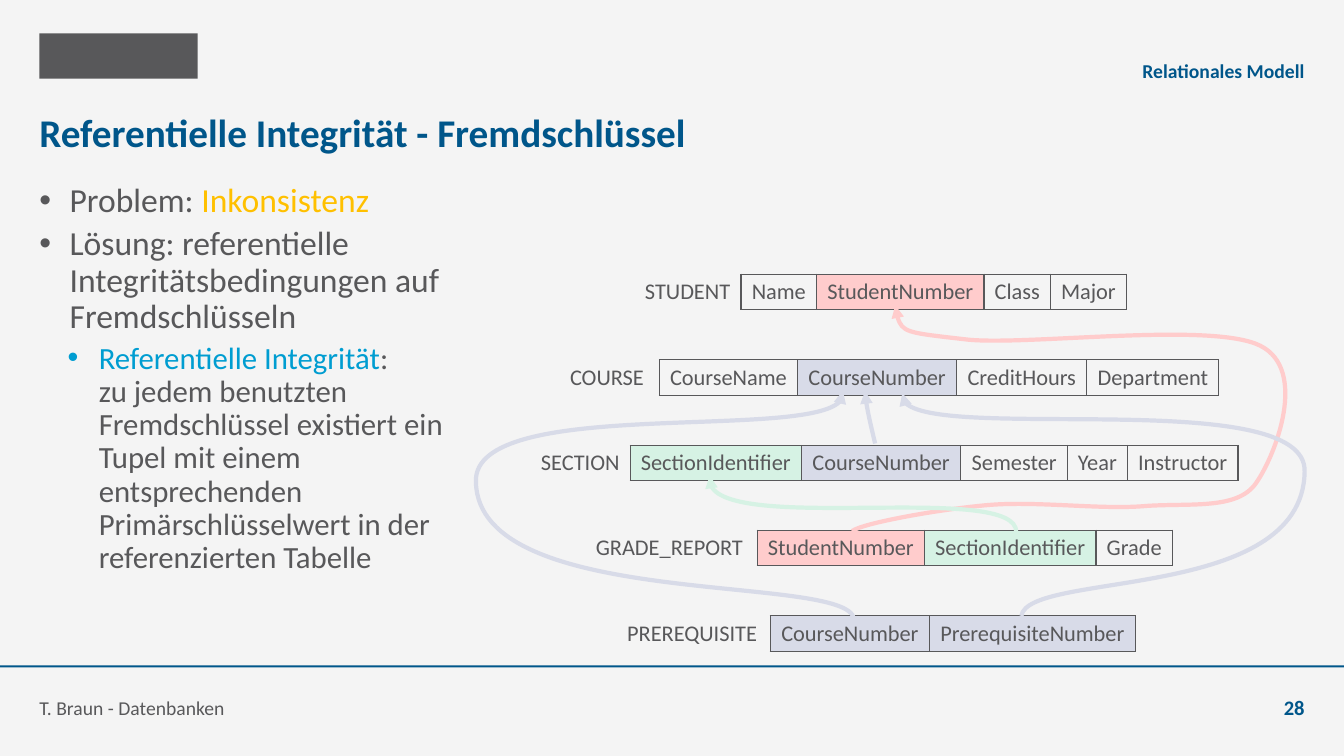
"""Build the slide on referential integrity and foreign keys."""
from lxml import etree
from pptx import Presentation
from pptx.dml.color import RGBColor
from pptx.enum.shapes import MSO_SHAPE
from pptx.enum.text import MSO_ANCHOR, PP_ALIGN
from pptx.oxml.ns import qn
from pptx.util import Pt

PX = 9144
TOP, MID, LOW = MSO_ANCHOR.TOP, MSO_ANCHOR.MIDDLE, MSO_ANCHOR.BOTTOM
LEFT, RIGHT, CENTER = PP_ALIGN.LEFT, PP_ALIGN.RIGHT, PP_ALIGN.CENTER
RECT = MSO_SHAPE.RECTANGLE
NAVY, GRAY, GOLD, CYAN = "00568A", "58585A", "FFC000", "009DD1"
PINK, LILAC, MINT = "FFCCCC", "D8DBE8", "D6F2E4"
hue = RGBColor.from_string


def box(x, y, w, h, anchor):
    """Add a text box without margins and return its frame."""
    frame = slide.shapes.add_textbox(x * PX, y * PX, w * PX, h * PX).text_frame
    frame.word_wrap = True
    frame.vertical_anchor = anchor
    frame.margin_left = frame.margin_right = 0
    frame.margin_top = frame.margin_bottom = 0
    return frame


def style(par, size, color, bold=False):
    """Set the font of a paragraph."""
    par.font.name = "Calibri"
    par.font.size = Pt(size)
    par.font.bold = bold
    par.font.color.rgb = hue(color)


deck = Presentation()
deck.slide_width, deck.slide_height = 1333 * PX, 750 * PX
slide = deck.slides.add_slide(deck.slide_layouts[6])
slide.background.fill.solid()
slide.background.fill.fore_color.rgb = hue("F4F4F4")

for x, y, w, h, color in [(39, 33, 157, 45, GRAY), (0, 660, 1333, 2, NAVY)]:
    bar = slide.shapes.add_shape(RECT, x * PX, y * PX, w * PX, h * PX)
    bar.shadow.inherit = False
    bar.fill.solid()
    bar.fill.fore_color.rgb = hue(color)
    bar.line.fill.background()

labels = [
    (39, 99, 1255, 63, MID, LEFT, "Referentielle Integrität - Fremdschlüssel", 28, NAVY, True),
    (393, 43, 901, 39, LOW, RIGHT, "Relationales Modell", 14, NAVY, True),
    (39, 675, 920, 39, LOW, LEFT, "T. Braun - Datenbanken", 14, GRAY, False),
    (1215, 675, 79, 39, LOW, RIGHT, "28", 14.7, NAVY, True),
]
for x, y, w, h, anchor, align, text, size, color, bold in labels:
    par = box(x, y, w, h, anchor).paragraphs[0]
    par.text = text
    par.alignment = align
    style(par, size, color, bold)

points = [
    (0, 30, 30, 24, [("Problem: ", GRAY), ("Inkonsistenz", GOLD)]),
    (0, 30, 30, 24, [("Lösung: referentielle Integritätsbedingungen auf Fremdschlüsseln", GRAY)]),
    (1, 59, 31, 22, [
        ("Referentielle Integrität", CYAN),
        (":\vzu jedem benutzten Fremdschlüssel existiert ein Tupel mit einem "
         "entsprechenden Primärschlüsselwert in der referenzierten Tabelle", GRAY),
    ]),
]
body = box(39, 182, 421, 464, TOP)
for i, (level, left, hang, size, runs) in enumerate(points):
    par = body.add_paragraph() if i else body.paragraphs[0]
    par.level = level
    par.line_spacing = 0.9
    if i:
        par.space_before = Pt(5)
    props = par._p.get_or_add_pPr()
    props.set("marL", str(left * PX))
    props.set("indent", str(-hang * PX))
    etree.SubElement(props, qn("a:buFont")).set("typeface", "Arial")
    etree.SubElement(props, qn("a:buChar")).set("char", "•")
    style(par, size, GRAY)
    for text, color in runs:
        for j, part in enumerate(text.split("\v")):
            if j:
                par.add_line_break()
            run = par.add_run()
            run.text = part
            run.font.color.rgb = hue(color)

wide = {
    "STUDENT": 106, "Name": 75, "StudentNumber": 166, "Class": 66, "Major": 75,
    "COURSE": 104, "CourseName": 137, "CourseNumber": 158, "CreditHours": 129,
    "Department": 131, "SECTION": 99, "SectionIdentifier": 170, "Semester": 106,
    "Year": 59, "Instructor": 110, "GRADE_REPORT": 168, "Grade": 76,
    "PREREQUISITE": 150, "PrerequisiteNumber": 204,
}
keys = {"StudentNumber": PINK, "CourseNumber": LILAC,
        "PrerequisiteNumber": LILAC, "SectionIdentifier": MINT}
schema = [
    (629, CENTER, ["STUDENT", "Name", "StudentNumber", "Class", "Major"]),
    (550, CENTER, ["COURSE", "CourseName", "CourseNumber", "CreditHours", "Department"]),
    (526, CENTER, ["SECTION", "SectionIdentifier", "CourseNumber", "Semester", "Year",
                   "Instructor"]),
    (583, LEFT, ["GRADE_REPORT", "StudentNumber", "SectionIdentifier", "Grade"]),
    (614, LEFT, ["PREREQUISITE", "CourseNumber", "PrerequisiteNumber"]),
]
for i, (x, align, names) in enumerate(schema):
    y = round(272 + 84.75 * i)
    total = sum(wide[name] for name in names)
    table = slide.shapes.add_table(1, len(names), x * PX, y * PX, total * PX, 35 * PX).table
    table.first_row = table.horz_banding = False
    for j, name in enumerate(names):
        table.columns[j].width = wide[name] * PX
        cell = table.cell(0, j)
        cell.margin_left = cell.margin_right = 8 * PX
        cell.margin_top = cell.margin_bottom = 4 * PX
        par = cell.text_frame.paragraphs[0]
        par.text = name
        par.alignment = CENTER if j else align
        style(par, 16, GRAY)
        if name in keys:
            cell.fill.solid()
            cell.fill.fore_color.rgb = hue(keys[name])
        else:
            cell.fill.background()
        props = cell._tc.get_or_add_tcPr()
        for k, side in enumerate("LRTB"):
            edge = etree.Element(qn("a:ln" + side), w=str(Pt(1)))
            if j or side == "R":
                fill = etree.SubElement(edge, qn("a:solidFill"))
                etree.SubElement(fill, qn("a:srgbClr")).set("val", GRAY)
            else:
                etree.SubElement(edge, qn("a:noFill"))
            props.insert(k, edge)

arrows = [
    (PINK, [(845, 527), (855, 519), (933, 505), (981, 501), (1030, 497), (1093, 506),
            (1137, 502), (1181, 499), (1228, 506), (1246, 479), (1265, 452), (1298, 367),
            (1250, 343), (1202, 319), (1020, 343), (960, 337), (899, 330), (891, 330),
            (888, 303)]),
    (LILAC, [(868, 440), (863, 419), (858, 397), (858, 388)]),
    (LILAC, [(847, 614), (840, 568), (474, 607), (472, 478), (469, 392), (848, 444),
             (836, 388)]),
    (LILAC, [(1013, 611), (1020, 566), (1292, 598), (1294, 468), (1297, 382), (883, 446),
             (895, 390)]),
    (MINT, [(1008, 528), (1009, 478), (692, 535), (704, 472)]),
]
for color, knots in arrows:
    pen = slide.shapes.build_freeform(*knots[0], scale=PX)
    pen.add_line_segments(knots[1:], close=False)
    curve = pen.convert_to_shape()
    curve.shadow.inherit = False
    curve.fill.background()
    curve.line.color.rgb = hue(color)
    curve.line.width = Pt(3)
    etree.SubElement(curve.line._get_or_add_ln(), qn("a:tailEnd")).set("type", "triangle")
    steps = list(curve._element.iter(qn("a:lnTo")))
    trace = steps[0].getparent()
    for i in range(0, len(steps), 3):
        bend = etree.SubElement(trace, qn("a:cubicBezTo"))
        for step in steps[i:i + 3]:
            bend.append(step[0])
            trace.remove(step)

deck.save("out.pptx")
